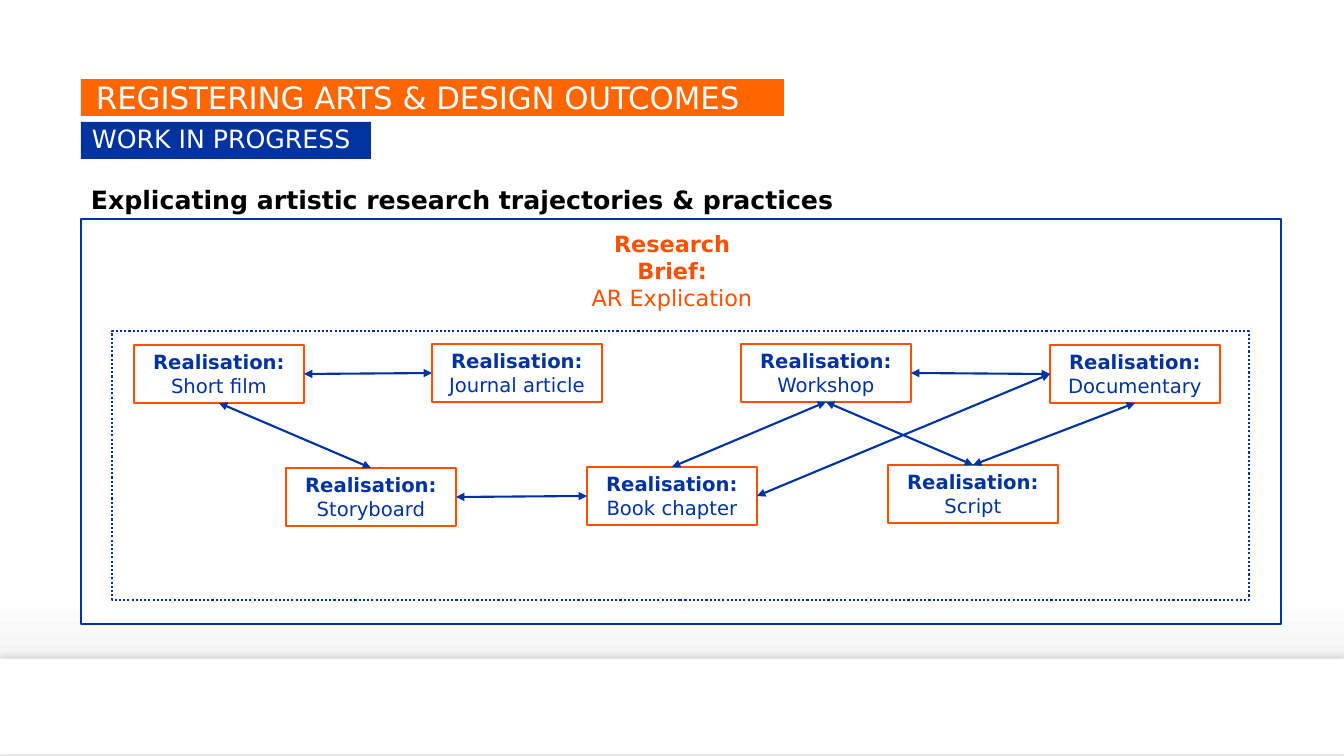
from copy import deepcopy

from lxml.etree import SubElement
from pptx import Presentation
from pptx.dml.color import RGBColor
from pptx.enum.dml import MSO_LINE_DASH_STYLE as DASH
from pptx.enum.shapes import MSO_CONNECTOR as CONNECTOR, MSO_SHAPE as SHAPE
from pptx.enum.text import MSO_ANCHOR as ANCHOR, MSO_AUTO_SIZE as AUTO_SIZE, PP_ALIGN as ALIGN
from pptx.oxml.ns import qn
from pptx.util import Pt

FONT = "DejaVu Sans"
WHITE = RGBColor(0xFF, 0xFF, 0xFF)
BLACK = RGBColor(0, 0, 0)
ORANGE = RGBColor(0xFF, 0x66, 0x00)
BRIGHT_ORANGE = RGBColor(0xFF, 0x50, 0x00)
NAVY = RGBColor(0x00, 0x33, 0x9F)
BLUE = RGBColor(0x00, 0x33, 0xA0)
GRADIENT = [
    (0, WHITE),
    (0.79, RGBColor(0xFE, 0xFE, 0xFE)),
    (0.92, RGBColor(0xED, 0xED, 0xED)),
]
TOP, LEFT, BOTTOM, RIGHT = range(4)
NODE_SIZE = (170, 58)
NODES = {
    "Short film": (53, 126),
    "Journal article": (351, 125),
    "Workshop": (660, 125),
    "Documentary": (969, 126),
    "Storyboard": (205, 249),
    "Book chapter": (506, 248),
    "Script": (807, 246),
}
LINKS = [
    ("Short film", RIGHT, "Journal article", LEFT),
    ("Short film", BOTTOM, "Storyboard", TOP),
    ("Storyboard", RIGHT, "Book chapter", LEFT),
    ("Book chapter", TOP, "Workshop", BOTTOM),
    ("Workshop", BOTTOM, "Script", TOP),
    ("Script", TOP, "Documentary", BOTTOM),
    ("Book chapter", RIGHT, "Documentary", LEFT),
    ("Workshop", RIGHT, "Documentary", LEFT),
]


def px(n):
    """Turn pixels into EMU."""
    return round(n * 914400 / 100.8)


def add_rect(slide, box, fill=None, line=None, dash=None):
    """Add a plain rectangle."""
    s = slide.shapes.add_shape(SHAPE.RECTANGLE, *map(px, box))
    s.shadow.inherit = False
    if fill is None:
        s.fill.background()
    else:
        s.fill.solid()
        s.fill.fore_color.rgb = fill
    if line is None:
        s.line.fill.background()
    else:
        s.line.color.rgb = line
        s.line.width = Pt(1.5)
        if dash:
            s.line.dash_style = dash
    return s


def write(s, lines, size, color, align=ALIGN.CENTER, anchor=ANCHOR.TOP):
    """Write (text, bold) lines into a shape, one paragraph each."""
    tf = s.text_frame
    tf.word_wrap = True
    tf.auto_size = AUTO_SIZE.NONE
    tf.vertical_anchor = anchor
    for i, (text, bold) in enumerate(lines):
        p = tf.add_paragraph() if i else tf.paragraphs[0]
        p.text = text
        p.alignment = align
        p.font.name = FONT
        p.font.size = Pt(size)
        p.font.bold = bold
        p.font.color.rgb = color
    return tf


def add_background(slide):
    """Fill the background with a downward gradient."""
    fill = slide.background.fill
    fill.gradient()
    fill.gradient_angle = 270
    stops = fill.gradient_stops[0]._gs.getparent()
    stops.append(deepcopy(stops[-1]))
    for stop, (position, color) in zip(fill.gradient_stops, GRADIENT):
        stop.position = position
        stop.color.rgb = color


def add_footer(slide, box):
    """Add the white footer band with a soft shadow above it, behind all else."""
    s = add_rect(slide, box, WHITE)
    effects = s._element.spPr.find(qn("a:effectLst"))
    shadow = SubElement(effects, qn("a:outerShdw"), blurRad=str(Pt(4)),
                        dist=str(Pt(3)), dir="16200000", rotWithShape="0")
    color = SubElement(shadow, qn("a:srgbClr"), val=str(BLACK))
    SubElement(color, qn("a:alpha"), val="10000")
    slide.shapes._spTree.insert(2, s._element)


def add_header(slide, box):
    """Place the title bar, the subtitle bar and the heading."""
    x, y, w, h = box
    title = slide.shapes.title
    title.left, title.top, title.width, title.height = map(px, (x, y, 703, 37))
    title.fill.solid()
    title.fill.fore_color.rgb = ORANGE
    tf = write(title, [("REGISTERING ARTS & DESIGN OUTCOMES", False)], 22, WHITE,
               ALIGN.LEFT, ANCHOR.BOTTOM)
    tf.margin_left, tf.margin_top, tf.margin_right, tf.margin_bottom = map(px, (15, 4, 16, 0))
    tf.paragraphs[0].line_spacing = 0.9

    subtitle = add_rect(slide, (x, y + 43, 290, 37), NAVY)
    tf = write(subtitle, [("WORK IN PROGRESS", False)], 18, WHITE, ALIGN.LEFT)
    tf.margin_left, tf.margin_top, tf.margin_right, tf.margin_bottom = map(px, (11, 4, 10, 4))
    tf.paragraphs[0].line_spacing = 0.95

    heading = slide.shapes.add_textbox(*map(px, (x, y + h - 40, w, 40)))
    write(heading, [("Explicating artistic research trajectories & practices", True)],
          18, BLACK, ALIGN.LEFT)


def add_link(slide, start, start_side, end, end_side):
    """Join two nodes with a double-headed arrow."""
    c = slide.shapes.add_connector(CONNECTOR.STRAIGHT, 0, 0, 0, 0)
    c.begin_connect(start, start_side)
    c.end_connect(end, end_side)
    c.line.color.rgb = BLUE
    c.line.width = Pt(1.5)
    ln = c.line._get_or_add_ln()
    for tag in ("a:headEnd", "a:tailEnd"):
        SubElement(ln, qn(tag), type="triangle")
    SubElement(c._element.spPr, qn("a:effectLst"))


def add_diagram(slide, box):
    """Draw the framed research brief with its linked realisations."""
    x, y, w, h = box
    add_rect(slide, box, WHITE, BLUE)
    brief = slide.shapes.add_textbox(*map(px, (x + 487, y + 6, 208, 122)))
    write(brief, [("Research Brief:", True), ("AR Explication", False)], 16, BRIGHT_ORANGE)
    add_rect(slide, (x + 31, y + 112, w - 63, h - 136), WHITE, BLUE, DASH.ROUND_DOT)
    nodes = {}
    for name, (dx, dy) in NODES.items():
        nodes[name] = add_rect(slide, (x + dx, y + dy, *NODE_SIZE), line=BRIGHT_ORANGE)
        write(nodes[name], [("Realisation:", True), (name, False)], 14, BLUE)
    for start, start_side, end, end_side in LINKS:
        add_link(slide, nodes[start], start_side, nodes[end], end_side)


def main():
    """Build and save the slide."""
    prs = Presentation()
    prs.slide_width, prs.slide_height = px(1344), px(756)
    slide = prs.slides.add_slide(prs.slide_layouts[5])
    add_background(slide)
    add_footer(slide, (0, 659, 1344, 95))
    add_header(slide, (81, 79, 772, 140))
    add_diagram(slide, (81, 219, 1200, 405))
    prs.save("out.pptx")


if __name__ == "__main__":
    main()
